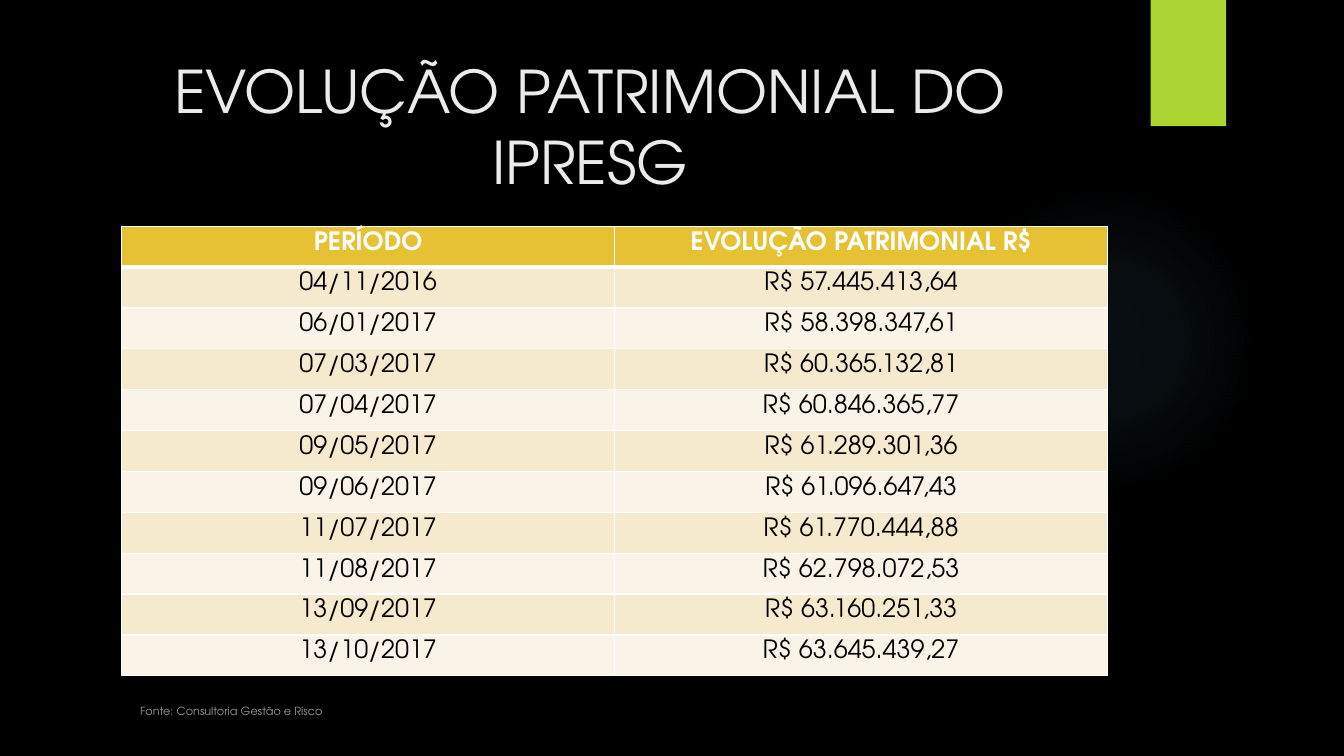
from dataclasses import dataclass

from pptx import Presentation
from pptx.dml.color import RGBColor
from pptx.enum.shapes import MSO_SHAPE
from pptx.enum.text import MSO_ANCHOR, PP_ALIGN
from pptx.oxml import parse_xml
from pptx.oxml.ns import nsdecls
from pptx.shapes.autoshape import Shape
from pptx.slide import Slide
from pptx.table import _Cell
from pptx.text.text import TextFrame
from pptx.util import Cm, Pt

FACE = "TeX Gyre Adventor"
WHITE = "FFFFFF"


@dataclass
class Box:
    left: float
    top: float
    width: float
    height: float

    def place(self) -> tuple[Cm, ...]:
        return tuple(Cm(v) for v in (self.left, self.top, self.width, self.height))


@dataclass
class Label:
    text: str
    box: Box
    size: float
    tint: str
    align: PP_ALIGN
    anchor: MSO_ANCHOR


@dataclass
class Entry:
    date: str
    value: str


LABELS = [
    Label("EVOLUÇÃO PATRIMONIAL DO IPRESG", Box(1.8, 1.22, 26.14, 3.89), 42,
          "EBEBEB", PP_ALIGN.CENTER, MSO_ANCHOR.MIDDLE),
    Label("Fonte: Consultoria Gestão e Risco", Box(3.28, 17.37, 9.8, 0.84), 8,
          "999999", PP_ALIGN.LEFT, MSO_ANCHOR.BOTTOM),
]

ENTRIES = [
    Entry("PERÍODO", "EVOLUÇÃO PATRIMONIAL R$"),
    Entry("04/11/2016", "R$ 57.445.413,64"),
    Entry("06/01/2017", "R$ 58.398.347,61"),
    Entry("07/03/2017", "R$ 60.365.132,81"),
    Entry("07/04/2017", "R$ 60.846.365,77"),
    Entry("09/05/2017", "R$ 61.289.301,36"),
    Entry("09/06/2017", "R$ 61.096.647,43"),
    Entry("11/07/2017", "R$ 61.770.444,88"),
    Entry("11/08/2017", "R$ 62.798.072,53"),
    Entry("13/09/2017", "R$ 63.160.251,33"),
    Entry("13/10/2017", "R$ 63.645.439,27"),
]


def color(code: str) -> RGBColor:
    return RGBColor.from_string(code)


def apply(target: object, style: dict) -> None:
    for name, value in style.items():
        setattr(target, name, value)


def write(frame: TextFrame, text: str, size: float, tint: str,
          align: PP_ALIGN, bold: bool = False) -> None:
    line = frame.paragraphs[0]
    line.alignment = align
    run = line.add_run()
    run.text = text
    apply(run.font, {"name": FACE, "size": Pt(size), "bold": bold})
    run.font.color.rgb = color(tint)


def add_label(slide: Slide, label: Label) -> None:
    frame = slide.shapes.add_textbox(*label.box.place()).text_frame
    apply(frame, {"word_wrap": True, "vertical_anchor": label.anchor})
    write(frame, label.text, label.size, label.tint, label.align)


def add_form(slide: Slide, kind: MSO_SHAPE, box: Box, tint: str) -> Shape:
    shape = slide.shapes.add_shape(kind, *box.place())
    shape.shadow.inherit = False
    shape.fill.solid()
    shape.fill.fore_color.rgb = color(tint)
    shape.line.fill.background()
    return shape


def add_glow(slide: Slide, box: Box, tint: str) -> None:
    shape = add_form(slide, MSO_SHAPE.OVAL, box, tint)
    stops = "".join(
        f'<a:gs pos="{spot * 1000}"><a:srgbClr val="{tint}">'
        f'<a:alpha val="{alpha * 1000}"/></a:srgbClr></a:gs>'
        for spot, alpha in ((0, 7), (36, 6), (69, 0), (100, 0)))
    blend = parse_xml(
        f'<a:gradFill {nsdecls("a")} rotWithShape="1"><a:gsLst>{stops}</a:gsLst>'
        '<a:path path="circle"><a:fillToRect l="50000" t="50000" r="50000" '
        'b="50000"/></a:path></a:gradFill>')
    props = shape.element.spPr
    props.replace(props.find("{*}solidFill"), blend)


def add_edges(cell: _Cell, row: int) -> None:
    widths = {"L": 1, "R": 1, "T": 3 if row == 1 else 1, "B": 3 if row == 0 else 1}
    props = cell._tc.get_or_add_tcPr()
    for side, width in widths.items():
        props.append(parse_xml(
            f'<a:ln{side} {nsdecls("a")} w="{Pt(width)}"><a:solidFill>'
            f'<a:srgbClr val="{WHITE}"/></a:solidFill></a:ln{side}>'))


def add_grid(slide: Slide, box: Box, entries: list[Entry]) -> None:
    grid = slide.shapes.add_table(len(entries), 2, *box.place()).table
    for row, entry in enumerate(entries):
        grid.rows[row].height = Cm(box.height / len(entries))
        head = row == 0
        fill = "E6C133" if head else ("FAF4E8", "F5E9CE")[row % 2]
        for cell, text in zip(grid.rows[row].cells, (entry.date, entry.value)):
            apply(cell, {"margin_top": Cm(0.13), "margin_bottom": 0,
                         "vertical_anchor": MSO_ANCHOR.TOP})
            add_edges(cell, row)
            cell.fill.solid()
            cell.fill.fore_color.rgb = color(fill)
            write(cell.text_frame, text, 18, WHITE if head else "000000",
                  PP_ALIGN.CENTER, head)


def main() -> None:
    deck = Presentation()
    apply(deck, {"slide_width": Cm(33.87), "slide_height": Cm(19.05)})
    slide = deck.slides.add_slide(deck.slide_layouts[6])
    slide.background.fill.solid()
    slide.background.fill.fore_color.rgb = color("000000")
    add_glow(slide, Box(23.9, 4.65, 7.82, 7.82), "7AC4F0")
    add_form(slide, MSO_SHAPE.RECTANGLE, Box(29, 0, 1.9, 3.18), "ACD433")
    add_grid(slide, Box(3.07, 5.7, 24.84, 11.33), ENTRIES)
    for label in LABELS:
        add_label(slide, label)
    deck.save("out.pptx")


if __name__ == "__main__":
    main()
